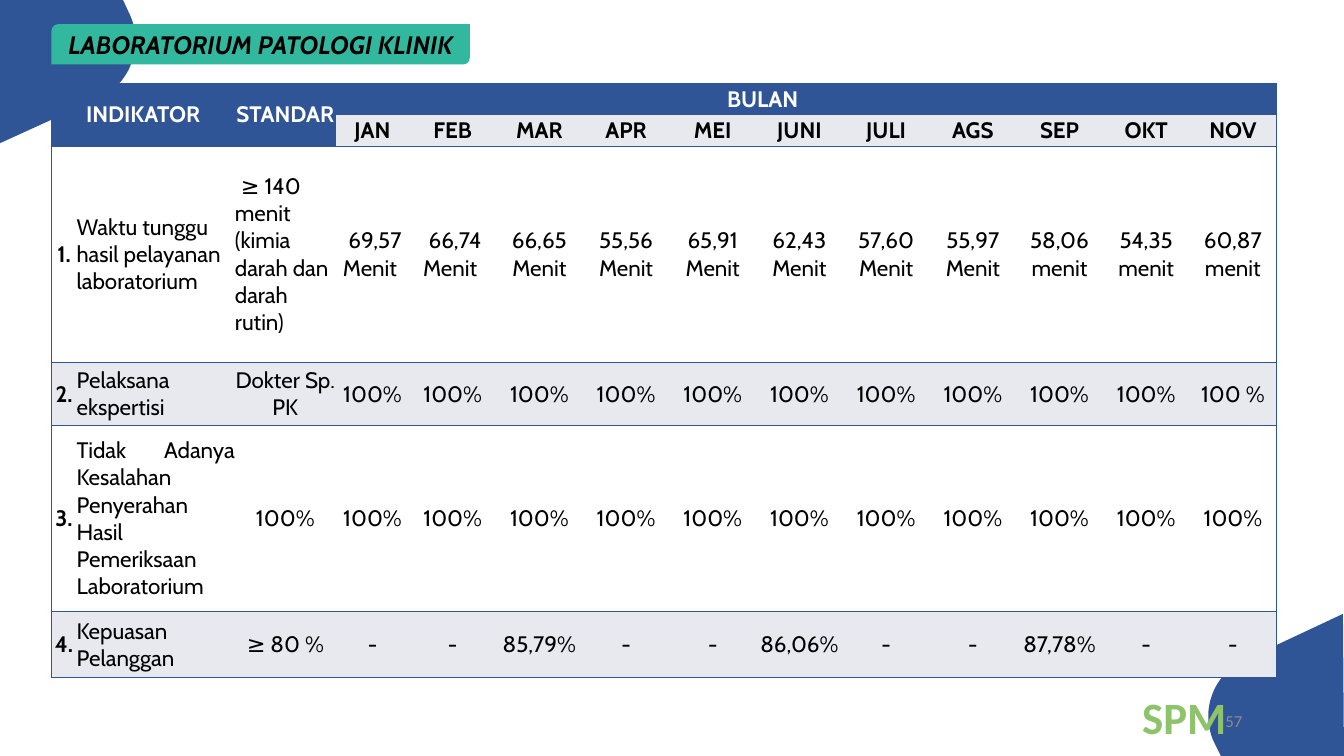
from pptx import Presentation, util as u
from pptx.dml.color import RGBColor
from pptx.enum import shapes, text
from pptx.oxml import parse_xml
from pptx.oxml.ns import nsdecls

THEME = {
    "blue": "2F5597", "band": "E8E9EF", "white": "FFFFFF", "black": "000000",
    "teal": "32B89E", "green": "8EC36B", "grey": "8C8C8C",
    "font": "Cabin", "footer_font": "Calibri",
    "table": 16, "title": 18, "number": 12, "mark": 32,
}
TITLE = "LABORATORIUM PATOLOGI KLINIK"
MONTHS = ["JAN", "FEB", "MAR", "APR", "MEI", "JUNI", "JULI", "AGS", "SEP", "OKT", "NOV"]
INDICATORS = [
    ("Waktu tunggu hasil pelayanan laboratorium",
     "≥ 140\nmenit\n(kimia darah dan darah rutin)",
     [" 69,57 Menit ", " 66,74 Menit ", "66,65 Menit", "55,56 Menit", "65,91 Menit",
      "62,43 Menit", "57,60 Menit", "55,97 Menit", "58,06 menit", "54,35 menit",
      "60,87 menit"]),
    ("Pelaksana ekspertisi", "Dokter Sp. PK", ["100%"] * 10 + ["100 %"]),
    ("Tidak Adanya Kesalahan Penyerahan Hasil Pemeriksaan Laboratorium", "100%",
     ["100%"] * 11),
    ("Kepuasan Pelanggan", "≥ 80 %",
     ["-", "-", "85,79%", "-", "-", "86,06%", "-", "-", "87,78%", "-", "-"]),
]
COLUMN_WIDTHS = [0.25, 1.57, 1, 0.73] + [0.86] * 10
ROW_HEIGHTS = [0.31, 0.31, 2.15, 0.62, 1.85, 0.65]
CORNERS = [
    [(13.33, 7.5), (12.11, 7.5), (12.04, 7.36),
     [(11.9, 7.06), (12.03, 6.69), (12.34, 6.55)], (13.32, 6.09)],
    [(0, 0), (1.22, 0), (1.29, 0.15),
     [(1.43, 0.46), (1.29, 0.83), (0.99, 0.97)], (0, 1.42)],
]
CURVE_STEPS = 24
ALIGN = text.PP_ALIGN
MIDDLE = text.MSO_ANCHOR.MIDDLE


def color(name):
    return RGBColor.from_string(THEME[name])


def paint(shape, name):
    shape.fill.solid()
    shape.fill.fore_color.rgb = color(name)
    shape.line.fill.background()
    shape.shadow.inherit = False


def write(frame, words, size, ink, align, font="font", bold=False, italic=False):
    para = frame.paragraphs[0]
    para.alignment = align
    for index, line in enumerate(words.split("\n")):
        if index:
            para.add_line_break()
        span = para.add_run()
        span.text = line
        span.font.name = THEME[font]
        span.font.size = u.Pt(THEME[size])
        span.font.color.rgb = color(ink)
        span.font.bold = bold
        span.font.italic = italic
    return para


def outline(steps):
    points = []
    for step in steps:
        if isinstance(step, tuple):
            points.append(step)
            continue
        a, (b, c, d) = points[-1], step
        for i in range(1, CURVE_STEPS + 1):
            t = i / CURVE_STEPS
            s = 1 - t
            points.append(tuple(
                s**3 * a[k] + 3 * s * s * t * b[k] + 3 * s * t * t * c[k] + t**3 * d[k]
                for k in (0, 1)))
    return points


def add_corner(page, steps):
    points = [(u.Inches(x), u.Inches(y)) for x, y in outline(steps)]
    builder = page.shapes.build_freeform(*points[0])
    builder.add_line_segments(points[1:], close=True)
    paint(builder.convert_to_shape(), "blue")


def border(cell, sides):
    props = cell._tc.get_or_add_tcPr()
    for side in "LRTB":
        fill = (f'<a:solidFill><a:srgbClr val="{THEME["blue"]}"/></a:solidFill>'
                if side in sides else "<a:noFill/>")
        props.append(parse_xml(f'<a:ln{side} {nsdecls("a")} w="12700">{fill}</a:ln{side}>'))


def fill_cell(cell, words, ink="black", align=ALIGN.CENTER, bold=False):
    if words:
        return write(cell.text_frame, words, "table", ink, align, bold=bold)


def add_table(page):
    rows, cols = len(ROW_HEIGHTS), len(COLUMN_WIDTHS)
    table = page.shapes.add_table(
        rows, cols, u.Inches(0.51), u.Inches(0.83),
        u.Inches(sum(COLUMN_WIDTHS)), u.Inches(sum(ROW_HEIGHTS))).table
    for column, width in zip(table.columns, COLUMN_WIDTHS):
        column.width = u.Inches(width)
    for row, height in zip(table.rows, ROW_HEIGHTS):
        row.height = u.Inches(height)
    for r in range(rows):
        for c in range(cols):
            cell = table.cell(r, c)
            cell.margin_left = cell.margin_right = cell.margin_top = cell.margin_bottom = 0
            cell.vertical_anchor = MIDDLE
            border(cell, "TB" + "L" * (c == 0) + "R" * (c == cols - 1))
            header = r == 0 or (r == 1 and c < 3)
            cell.fill.solid()
            cell.fill.fore_color.rgb = color("blue" if header else "band" if r % 2 else "white")

    for first, last, label in [((0, 0), (1, 1), "INDIKATOR"), ((0, 2), (1, 2), "STANDAR"),
                               ((0, 3), (0, 12), "BULAN")]:
        table.cell(*first).merge(table.cell(*last))
        fill_cell(table.cell(*first), label, "white", bold=True)
    for c, month in enumerate(MONTHS, 3):
        fill_cell(table.cell(1, c), month, bold=True)

    for number, (name, standard, values) in enumerate(INDICATORS, 1):
        r = number + 1
        fill_cell(table.cell(r, 0), f"{number}.", bold=True)
        fill_cell(table.cell(r, 1), name, align=ALIGN.LEFT if number == 1 else ALIGN.JUSTIFY)
        multiline = "\n" in standard
        para = fill_cell(table.cell(r, 2), standard,
                         align=ALIGN.LEFT if multiline else ALIGN.CENTER)
        if multiline:
            para._p.get_or_add_pPr().set("indent", str(u.Inches(0.06)))
        for c, value in enumerate(values, 3):
            fill_cell(table.cell(r, c), value)


def add_label(page, left, top, width, height):
    box = page.shapes.add_textbox(*map(u.Inches, (left, top, width, height)))
    box.text_frame.word_wrap = True
    return box.text_frame


def main():
    deck = Presentation()
    deck.slide_width, deck.slide_height = u.Inches(13.33), u.Inches(7.5)
    page = deck.slides.add_slide(deck.slide_layouts[6])
    for steps in CORNERS:
        add_corner(page, steps)
    add_table(page)

    title = page.shapes.add_shape(
        shapes.MSO_SHAPE.ROUND_2_DIAG_RECTANGLE, *map(u.Inches, (0.51, 0.24, 4.15, 0.4)))
    paint(title, "teal")
    title.text_frame.vertical_anchor = MIDDLE
    title.text_frame.word_wrap = True
    write(title.text_frame, TITLE, "title", "black", ALIGN.CENTER, bold=True, italic=True)

    number = add_label(page, 9.42, 6.95, 3, 0.4)
    number.vertical_anchor = MIDDLE
    write(number, "57", "number", "grey", ALIGN.RIGHT, "footer_font")
    mark = add_label(page, 11.23, 6.79, 1.18, 0.64)
    write(mark, "SPM", "mark", "green", ALIGN.LEFT, "footer_font", bold=True)
    deck.save("out.pptx")


if __name__ == "__main__":
    main()
